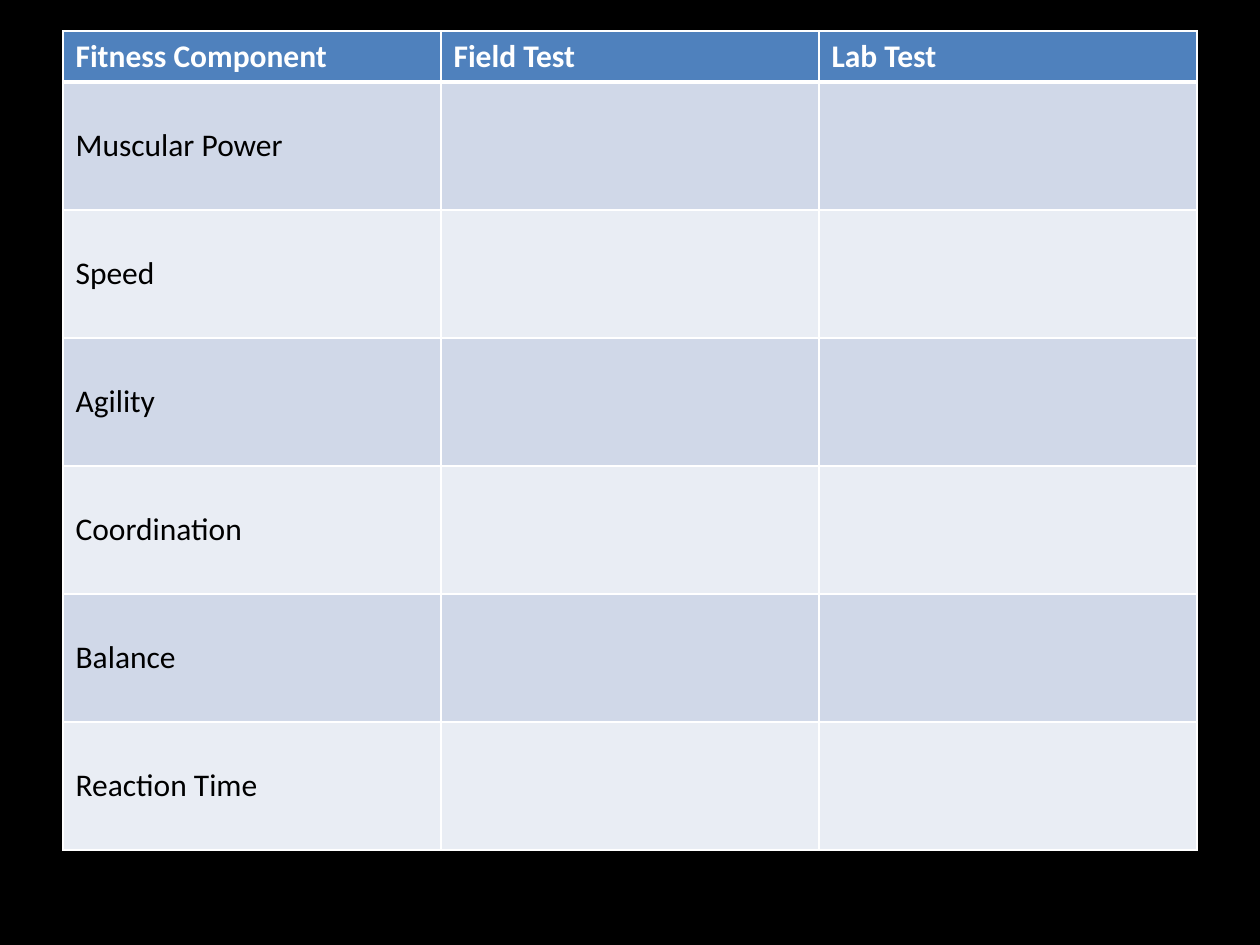
from dataclasses import dataclass

from lxml.etree import SubElement
from pptx import Presentation
from pptx.dml.color import RGBColor
from pptx.enum.text import MSO_VERTICAL_ANCHOR as Anchor
from pptx.oxml.ns import qn
from pptx.table import Table, _Cell as Cell
from pptx.util import Pt

EMU_PER_PX = 914400 / 126
FONT = "Calibri"
COLORS = {
    "background": "000000",
    "header": "4F81BD",
    "band_dark": "D0D8E8",
    "band_light": "E9EDF4",
    "border": "FFFFFF",
    "header_text": "FFFFFF",
    "body_text": "000000",
}
HEADINGS = ("Fitness Component", "Field Test", "Lab Test")
COMPONENTS = (
    "Muscular Power",
    "Speed",
    "Agility",
    "Coordination",
    "Balance",
    "Reaction Time",
)
LEFT, TOP = 63, 31
COLUMN_WIDTH = 378
HEADER_HEIGHT, BODY_HEIGHT = 51, 128


@dataclass(frozen=True)
class RowStyle:
    height: int
    fill: str
    text: str
    bold: bool
    top_border: int
    bottom_border: int


def px(length: int) -> int:
    return round(length * EMU_PER_PX)


def color(name: str) -> RGBColor:
    return RGBColor.from_string(COLORS[name])


def draw_borders(cell: Cell, top: int, bottom: int) -> None:
    properties = cell._tc.get_or_add_tcPr()
    for side, width in (("L", 1), ("R", 1), ("T", top), ("B", bottom)):
        line = SubElement(properties, qn(f"a:ln{side}"), w=str(Pt(width)))
        fill = SubElement(line, qn("a:solidFill"))
        SubElement(fill, qn("a:srgbClr"), val=COLORS["border"])


def draw_cell(cell: Cell, words: str, style: RowStyle) -> None:
    draw_borders(cell, style.top_border, style.bottom_border)
    cell.fill.solid()
    cell.fill.fore_color.rgb = color(style.fill)
    cell.vertical_anchor = Anchor.MIDDLE
    cell.text_frame.text = words
    font = cell.text_frame.paragraphs[0].font
    for span in cell.text_frame.paragraphs[0].runs:
        font = span.font
        font.name = FONT
        font.size = Pt(18)
        font.bold = style.bold
        font.color.rgb = color(style.text)


def draw_row(table: Table, index: int, words: tuple[str, ...], style: RowStyle) -> None:
    table.rows[index].height = px(style.height)
    for column, entry in enumerate(words):
        draw_cell(table.cell(index, column), entry, style)


def body_style(index: int) -> RowStyle:
    band = "band_light" if index % 2 else "band_dark"
    top_border = 1 if index else 3
    return RowStyle(BODY_HEIGHT, band, "body_text", False, top_border, 1)


def main() -> None:
    deck = Presentation()
    deck.slide_width, deck.slide_height = px(1260), px(945)
    page = deck.slides.add_slide(deck.slide_layouts[6])
    page.background.fill.solid()
    page.background.fill.fore_color.rgb = color("background")

    table = page.shapes.add_table(
        len(COMPONENTS) + 1,
        len(HEADINGS),
        px(LEFT),
        px(TOP),
        px(COLUMN_WIDTH * len(HEADINGS)),
        px(HEADER_HEIGHT + BODY_HEIGHT * len(COMPONENTS)),
    ).table
    table.horz_banding = False
    for column in table.columns:
        column.width = px(COLUMN_WIDTH)

    header = RowStyle(HEADER_HEIGHT, "header", "header_text", True, 1, 3)
    draw_row(table, 0, HEADINGS, header)
    for index, component in enumerate(COMPONENTS):
        draw_row(table, index + 1, (component, "", ""), body_style(index))

    deck.save("out.pptx")


if __name__ == "__main__":
    main()
